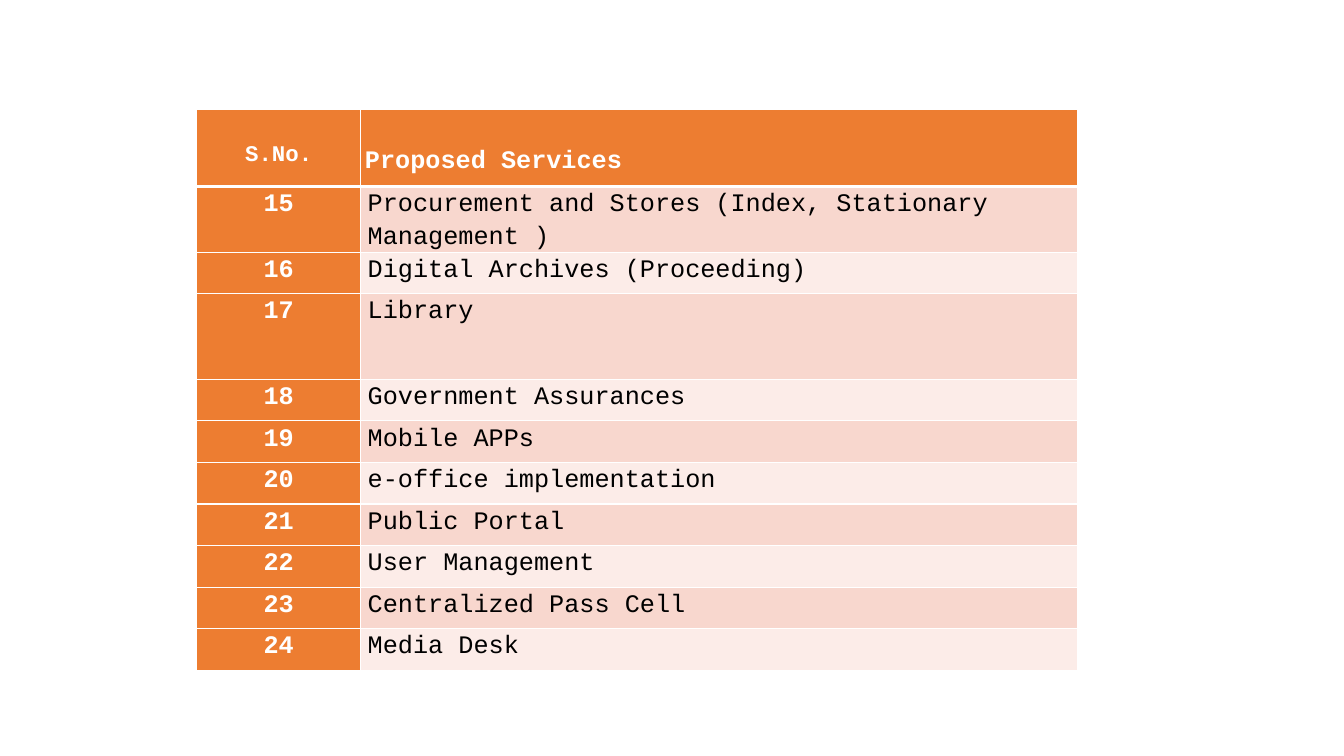
from dataclasses import dataclass

from lxml.etree import SubElement
from pptx import Presentation
from pptx.dml.color import RGBColor
from pptx.enum.text import PP_ALIGN
from pptx.oxml.ns import qn
from pptx.util import Pt


@dataclass(frozen=True)
class Theme:
    """Colours, type sizes and font of the slide."""
    font: str = "Courier New"
    head: str = "ED7D31"
    odd: str = "F8D7CE"
    even: str = "FCECE8"
    white: str = "FFFFFF"
    black: str = "000000"
    small: int = 16
    body: int = 18


THEME = Theme()
FIRST = 15
ITEMS = [
    "Procurement and Stores (Index, Stationary Management )",
    "Digital Archives (Proceeding)",
    "Library",
    "Government Assurances",
    "Mobile APPs",
    "e-office implementation",
    "Public Portal",
    "User Management",
    "Centralized Pass Cell",
    "Media Desk",
]
COLS = [117.4, 511.9]
ROW = 29.7
TALL = {0: 54.7, 3: 61.2}


def write(cell, text, *, size=THEME.body, color=THEME.white, bold=True,
          align=PP_ALIGN.CENTER, side=4.9, top=0):
    """Put formatted text into a cell."""
    cell.margin_left = cell.margin_right = Pt(side)
    cell.margin_top, cell.margin_bottom = Pt(top), Pt(0)
    para = cell.text_frame.paragraphs[0]
    para.alignment = align
    para.line_spacing = 1.15
    run = para.add_run()
    run.text = text
    font = run.font
    font.name, font.size, font.bold = THEME.font, Pt(size), bold
    font.color.rgb = RGBColor.from_string(color)


def paint(cell, fill, above=1, below=1):
    """Draw white borders round a cell and fill it."""
    props = cell._tc.get_or_add_tcPr()
    for edge, width in zip("LRTB", (1, 1, above, below)):
        line = SubElement(props, qn(f"a:ln{edge}"), w=str(Pt(width)))
        solid = SubElement(line, qn("a:solidFill"))
        SubElement(solid, qn("a:srgbClr"), val=THEME.white)
    cell.fill.solid()
    cell.fill.fore_color.rgb = RGBColor.from_string(fill)


def add_grid(slide):
    """Add the empty table with its column and row sizes."""
    sizes = [TALL.get(row, ROW) for row in range(len(ITEMS) + 1)]
    grid = slide.shapes.add_table(
        len(sizes), len(COLS), Pt(140.4), Pt(78.5),
        Pt(sum(COLS)), Pt(sum(sizes))).table
    for col, width in zip(grid.columns, COLS):
        col.width = Pt(width)
    for row, height in zip(grid.rows, sizes):
        row.height = Pt(height)
    return grid


def fill_head(grid):
    """Write the header row."""
    label, title = grid.cell(0, 0), grid.cell(0, 1)
    write(label, "S.No.", size=THEME.small, side=2.9, top=20.8)
    write(title, "Proposed Services", align=PP_ALIGN.LEFT, side=2.9, top=23.5)
    for cell in (label, title):
        paint(cell, THEME.head, below=3)


def fill_row(grid, row, item):
    """Write one numbered service."""
    number, name = grid.cell(row, 0), grid.cell(row, 1)
    above = 3 if row == 1 else 1
    align = PP_ALIGN.LEFT if row == 1 else PP_ALIGN.JUSTIFY
    write(number, str(FIRST + row - 1))
    write(name, item, color=THEME.black, bold=False, align=align)
    paint(number, THEME.head, above)
    paint(name, THEME.odd if row % 2 else THEME.even, above)


def main():
    """Build and save the slide."""
    deck = Presentation()
    deck.slide_width, deck.slide_height = Pt(960), Pt(540)
    slide = deck.slides.add_slide(deck.slide_layouts[6])
    grid = add_grid(slide)
    fill_head(grid)
    for row, item in enumerate(ITEMS, 1):
        fill_row(grid, row, item)
    deck.save("out.pptx")


if __name__ == "__main__":
    main()
